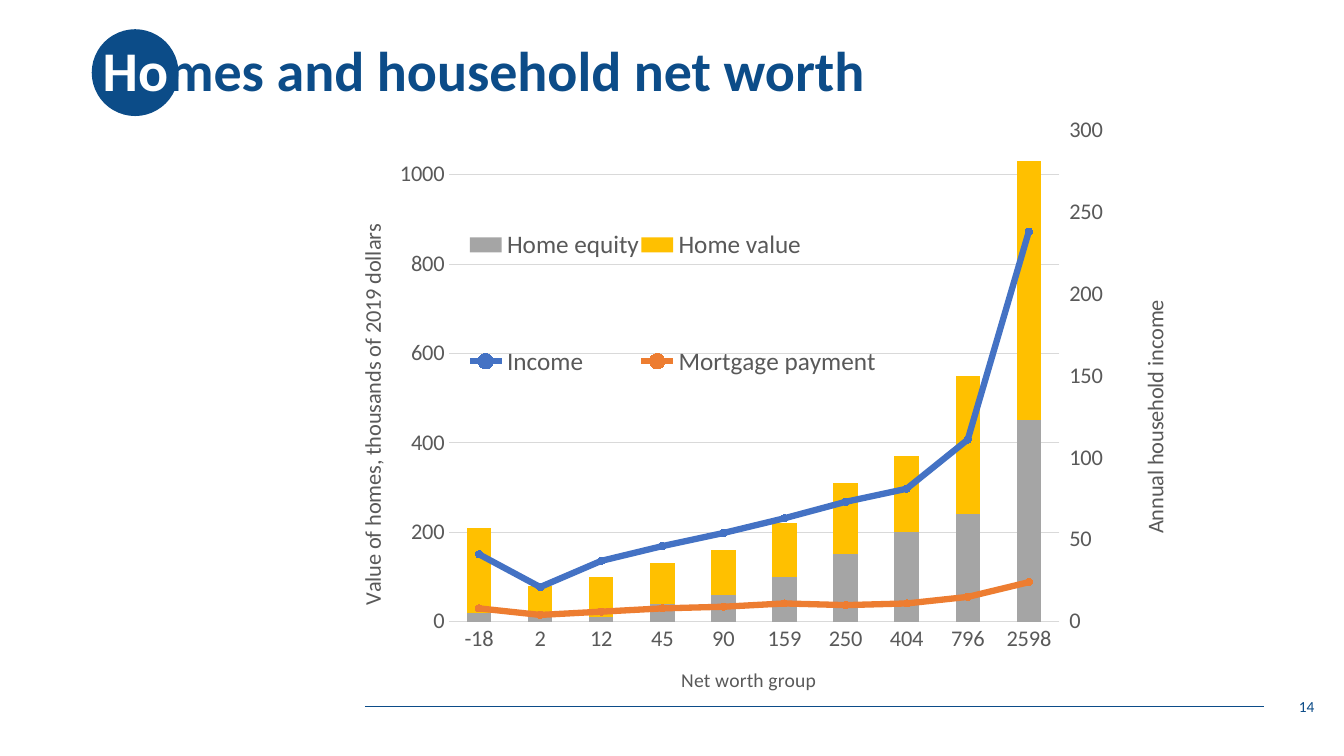
from pptx import Presentation
from pptx.chart.axis import ValueAxis
from pptx.chart.data import CategoryChartData as Data
from pptx.dml.color import RGBColor as RGB
from pptx.enum.chart import XL_CHART_TYPE as Kind, XL_LEGEND_POSITION as Side
from pptx.enum.chart import XL_MARKER_STYLE as Mark, XL_TICK_MARK as Tick
from pptx.enum.shapes import MSO_CONNECTOR as Link, MSO_SHAPE as Form
from pptx.enum.text import MSO_ANCHOR as Anchor, PP_ALIGN as Align
from pptx.oxml import parse_xml
from pptx.oxml.ns import nsdecls, qn
from pptx.util import Pt

HUES = {"navy": "0C4C88", "white": "FFFFFF", "text": "595959", "grid": "D9D9D9",
        "gray": "A5A5A5", "gold": "FFC000", "blue": "4472C4", "orange": "ED7D31"}
FACE = "Calibri"

GROUPS = ["-18", "2", "12", "45", "90", "159", "250", "404", "796", "2598"]
BARS = [("Home equity", "gray", (20, 10, 10, 40, 60, 100, 150, 200, 240, 450)),
        ("Home value", "gold", (190, 70, 90, 90, 100, 120, 160, 170, 310, 580))]
LINES = [("Income", "blue", (41, 21, 37, 46, 54, 63, 73, 81, 111, 238)),
         ("Mortgage payment", "orange", (8, 4, 6, 8, 9, 11, 10, 11, 15, 24))]

# Line plot with its own pair of axes on the right
LINE_PLOT = f"""<c:lineChart {nsdecls("c")}><c:grouping val="standard"/>
<c:varyColors val="0"/><c:marker val="1"/>
<c:axId val="501"/><c:axId val="502"/></c:lineChart>"""
RIGHT_VAL = f"""<c:valAx {nsdecls("c")}><c:axId val="502"/>
<c:scaling><c:orientation val="minMax"/></c:scaling><c:delete val="0"/>
<c:axPos val="r"/><c:numFmt formatCode="General" sourceLinked="0"/>
<c:majorTickMark val="out"/><c:minorTickMark val="none"/>
<c:tickLblPos val="nextTo"/><c:crossAx val="501"/><c:crosses val="max"/>
<c:crossBetween val="between"/></c:valAx>"""
RIGHT_CAT = f"""<c:catAx {nsdecls("c")}><c:axId val="501"/>
<c:scaling><c:orientation val="minMax"/></c:scaling><c:delete val="1"/>
<c:axPos val="b"/><c:majorTickMark val="none"/><c:minorTickMark val="none"/>
<c:tickLblPos val="nextTo"/><c:crossAx val="502"/><c:crosses val="autoZero"/>
</c:catAx>"""


def hue(name):
    return RGB.from_string(HUES[name])


def style(font, size, name, bold=False):
    font.name, font.size, font.bold = FACE, Pt(size), bold
    font.color.rgb = hue(name)


def place(node, x, y, wide=None, high=None, inner=False):
    """Set the place of a chart part as shares of the chart."""
    for old in node.findall(qn("c:layout")):
        node.remove(old)
    tags = '<c:layoutTarget val="inner"/>' if inner else ""
    tags += '<c:xMode val="edge"/><c:yMode val="edge"/>'
    for tag, val in zip("xywh", (x, y, wide, high)):
        if val is not None:
            tags += f'<c:{tag} val="{val}"/>'
    box = parse_xml(f'<c:layout {nsdecls("c")}><c:manualLayout>{tags}'
                    '</c:manualLayout></c:layout>')
    if inner:
        node.insert(0, box)
    else:
        node.find(qn("c:overlay")).addprevious(box)


class Deck:
    def __init__(self):
        self.show = Presentation()
        self.show.slide_width, self.show.slide_height = Pt(960), Pt(540)
        self.slide = self.show.slides.add_slide(self.show.slide_layouts[5])
        self.shapes = self.slide.shapes

    def rule(self, x, y, end):
        line = self.shapes.add_connector(Link.STRAIGHT, Pt(x), Pt(y), Pt(end), Pt(y))
        line.line.color.rgb, line.line.width = hue("navy"), Pt(0.5)
        props = line.element.find(qn("p:spPr"))
        props.append(parse_xml(f'<a:effectLst {nsdecls("a")}/>'))

    def disc(self, x, y, size):
        disc = self.shapes.add_shape(Form.OVAL, Pt(x), Pt(y), Pt(size), Pt(size))
        disc.shadow.inherit = False
        disc.fill.solid()
        disc.fill.fore_color.rgb = hue("navy")
        disc.line.fill.background()

    def title(self, box, parts):
        head = self.shapes.title
        head.left, head.top, head.width, head.height = map(Pt, box)
        head.text_frame.vertical_anchor = Anchor.MIDDLE
        para = head.text_frame.paragraphs[0]
        para.alignment, para.line_spacing = Align.LEFT, 0.9
        for text, name in parts:
            run = para.add_run()
            run.text = text
            style(run.font, 40, name, True)
        # Bring the title in front of the disc
        head.element.getparent().append(head.element)

    def label(self, box, text):
        frame = self.shapes.add_textbox(*map(Pt, box)).text_frame
        frame.word_wrap, frame.vertical_anchor = True, Anchor.MIDDLE
        para = frame.paragraphs[0]
        para.text, para.alignment = text, Align.RIGHT
        style(para.font, 11, "navy")

    def axis(self, axis, text, size, turn=False):
        style(axis.tick_labels.font, 16, "text")
        frame = axis.axis_title.text_frame
        frame.text = text
        style(frame.paragraphs[0].font, size, "text")
        if turn:
            body = frame.paragraphs[0]._p.getparent().find(qn("a:bodyPr"))
            body.set("rot", "-5400000")
            body.set("vert", "horz")
            axis.format.line.fill.background()

    def chart(self, box):
        data = Data()
        data.categories = GROUPS
        for name, _, vals in BARS + LINES:
            data.add_series(name, vals)
        chart = self.shapes.add_chart(Kind.COLUMN_STACKED, *map(Pt, box), data).chart
        chart.has_title = False
        style(chart.font, 10, "text")
        # Take the left axis while it is the only value axis
        base, left = chart.category_axis, chart.value_axis

        # Move the last series to the line plot
        area = chart.element.find(".//" + qn("c:plotArea"))
        bars = area.find(qn("c:barChart"))
        lines = parse_xml(LINE_PLOT)
        bars.addnext(lines)
        for ser in bars.findall(qn("c:ser"))[len(BARS):]:
            for flag in ser.findall(qn("c:invertIfNegative")):
                ser.remove(flag)
            lines.find(qn("c:marker")).addprevious(ser)
        node = parse_xml(RIGHT_VAL)
        area.find(qn("c:valAx")).addnext(node)
        node.addnext(parse_xml(RIGHT_CAT))
        right = ValueAxis(node)

        # Series colours
        cols, trend = chart.plots
        cols.gap_width, cols.overlap = 150, 100
        cols.vary_by_categories = False
        for ser, (_, name, _) in zip(cols.series, BARS):
            ser.format.fill.solid()
            ser.format.fill.fore_color.rgb = hue(name)
        for ser, (_, name, _) in zip(trend.series, LINES):
            ser.smooth = False
            ser.format.line.color.rgb, ser.format.line.width = hue(name), Pt(4.5)
            ser.marker.style, ser.marker.size = Mark.CIRCLE, 5
            ser.marker.format.fill.solid()
            ser.marker.format.fill.fore_color.rgb = hue(name)
            ser.marker.format.line.color.rgb = hue(name)

        # Axes
        self.axis(base, "Net worth group", 14)
        self.axis(left, "Value of homes, thousands of 2019 dollars", 16, True)
        self.axis(right, "Annual household income", 16, True)
        base.major_tick_mark = left.major_tick_mark = Tick.NONE
        left.minimum_scale, left.maximum_scale, left.major_unit = 0, 1100, 200
        right.minimum_scale, right.maximum_scale, right.major_unit = 0, 300, 50
        for line in base.format.line, left.major_gridlines.format.line:
            line.color.rgb, line.width = hue("grid"), Pt(0.75)

        # Legend and places
        chart.has_legend = True
        chart.legend.position = Side.BOTTOM
        chart.legend.include_in_layout = False
        style(chart.legend.font, 18, "text")
        place(area, 0.17, 0.08, 0.64, 0.71, True)
        place(chart.element.find(".//" + qn("c:legend")), 0.19, 0.1, 0.43, 0.46)
        spots = (0.41, 0.85), (0.07, 0.21), (0.89, 0.32)
        for node, spot in zip(area.iter(qn("c:title")), spots):
            place(node, *spot)


def main():
    deck = Deck()
    # Backdrop
    deck.rule(260.6, 504.7, 902.9)
    deck.disc(65.5, 20.9, 62)
    # Content
    deck.title((66.2, 0, 828, 104.4),
               [("Ho", "white"), ("mes and household net worth", "navy")])
    deck.label((730, 490.3, 216, 28.8), "14")
    deck.chart((204.5, 53.3, 681.8, 494.6))
    deck.show.save("out.pptx")


if __name__ == "__main__":
    main()
